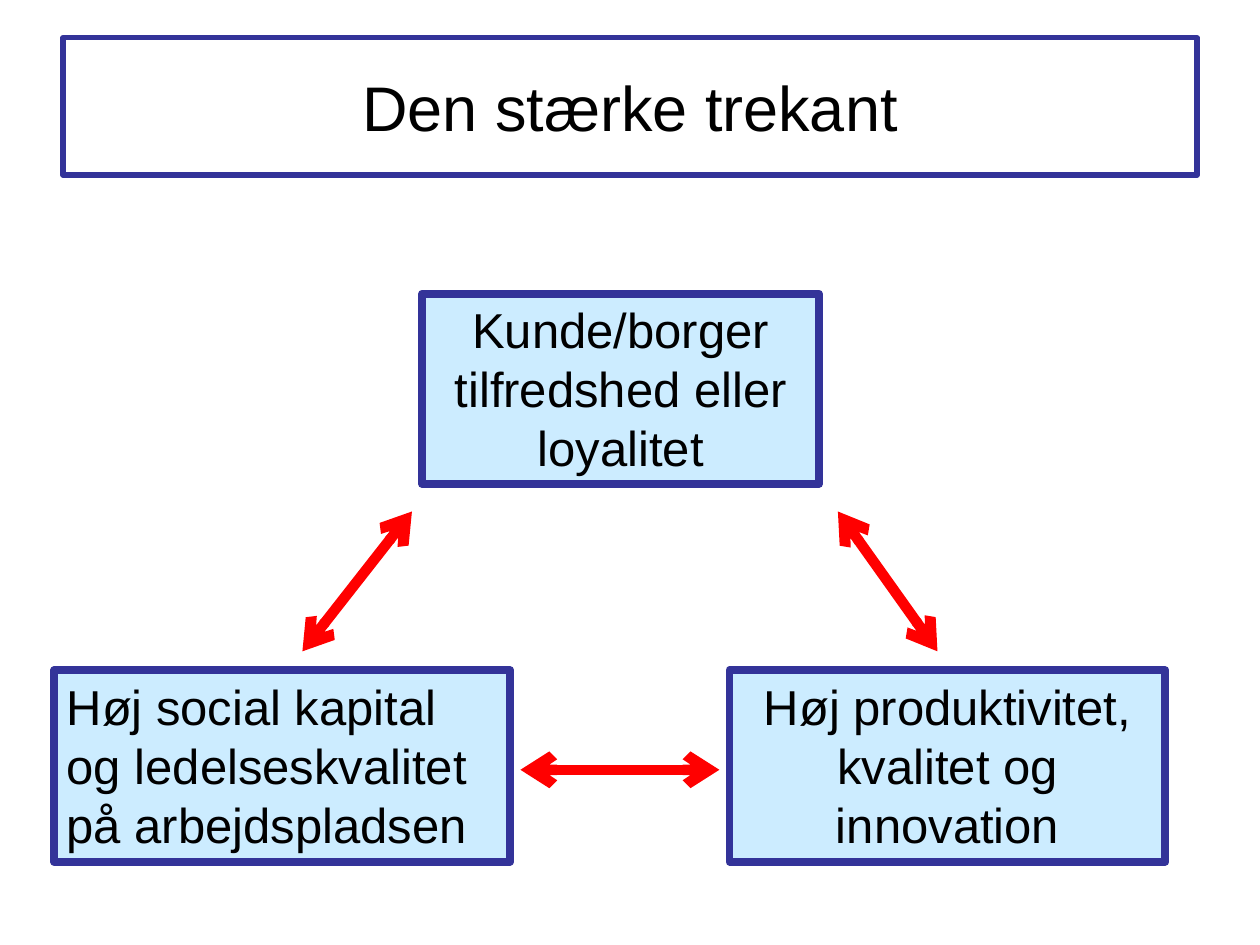
from dataclasses import dataclass

from lxml import etree
from pptx import Presentation
from pptx.dml.color import RGBColor
from pptx.enum.shapes import MSO_CONNECTOR, MSO_SHAPE
from pptx.enum.text import MSO_ANCHOR, MSO_AUTO_SIZE, PP_ALIGN
from pptx.oxml.ns import qn
from pptx.shapes.autoshape import Shape
from pptx.slide import Slide
from pptx.util import Pt

RECTANGLE = MSO_SHAPE.RECTANGLE
STRAIGHT = MSO_CONNECTOR.STRAIGHT
TOP, MIDDLE = MSO_ANCHOR.TOP, MSO_ANCHOR.MIDDLE
FIXED, GROW = MSO_AUTO_SIZE.NONE, MSO_AUTO_SIZE.SHAPE_TO_FIT_TEXT
LEFT, CENTER = PP_ALIGN.LEFT, PP_ALIGN.CENTER


@dataclass(frozen=True)
class Theme:
    font: str = "Arial"
    text: RGBColor = RGBColor(0x00, 0x00, 0x00)
    border: RGBColor = RGBColor(0x33, 0x33, 0x99)
    box: RGBColor = RGBColor(0xCC, 0xEC, 0xFF)
    arrow: RGBColor = RGBColor(0xFF, 0x00, 0x00)
    title_size: float = 36
    body_size: float = 28
    title_line: float = 3
    box_line: float = 4.5
    arrow_line: float = 6


@dataclass(frozen=True)
class Box:
    text: str
    left: float
    top: float
    width: float
    height: float
    align: PP_ALIGN = CENTER


@dataclass(frozen=True)
class Arrow:
    x1: float
    y1: float
    x2: float
    y2: float


THEME = Theme()
TITLE = Box("Den stærke trekant", 36, 21.6, 648, 78.5)
BOXES = [
    Box("Kunde/borger tilfredshed eller loyalitet", 241.2, 167.8, 226.8, 108.7),
    Box("Høj social kapital og ledelseskvalitet på arbejdspladsen",
        31, 383, 260.6, 109.4, LEFT),
    Box("Høj produktivitet, kvalitet og innovation", 416.9, 383, 249.1, 109.4),
]
ARROWS = [
    Arrow(235.4, 292.3, 172.8, 372.2),
    Arrow(478.8, 292.3, 535.7, 372.2),
    Arrow(297.4, 439.9, 411.1, 439.9),
]


def set_text(sp: Shape, box: Box, size: float, anchor: MSO_ANCHOR,
             fit: MSO_AUTO_SIZE) -> None:
    tf = sp.text_frame
    tf.text = box.text
    tf.word_wrap = True
    tf.auto_size = fit
    tf.vertical_anchor = anchor
    p = tf.paragraphs[0]
    p.alignment = box.align
    font = p.runs[0].font
    font.name = THEME.font
    font.size = Pt(size)
    font.color.rgb = THEME.text


def set_border(sp: Shape, width: float) -> None:
    sp.line.color.rgb = THEME.border
    sp.line.width = Pt(width)


def format_title(s: Slide, box: Box) -> None:
    sp = s.shapes.title
    sp.left, sp.top = Pt(box.left), Pt(box.top)
    sp.width, sp.height = Pt(box.width), Pt(box.height)
    set_border(sp, THEME.title_line)
    set_text(sp, box, THEME.title_size, MIDDLE, FIXED)


def draw_box(s: Slide, box: Box) -> None:
    sp = s.shapes.add_shape(RECTANGLE, Pt(box.left), Pt(box.top),
                            Pt(box.width), Pt(box.height))
    sp.shadow.inherit = False
    sp.fill.solid()
    sp.fill.fore_color.rgb = THEME.box
    set_border(sp, THEME.box_line)
    set_text(sp, box, THEME.body_size, TOP, GROW)


def draw_arrow(s: Slide, arrow: Arrow) -> None:
    cxn = s.shapes.add_connector(STRAIGHT, Pt(arrow.x1), Pt(arrow.y1),
                                 Pt(arrow.x2), Pt(arrow.y2))
    cxn.line.color.rgb = THEME.arrow
    cxn.line.width = Pt(THEME.arrow_line)
    ln = cxn.line._get_or_add_ln()
    for end in ("a:headEnd", "a:tailEnd"):
        etree.SubElement(ln, qn(end), type="arrow")
    etree.SubElement(ln.getparent(), qn("a:effectLst"))


def main() -> None:
    prs = Presentation()
    prs.slide_width, prs.slide_height = Pt(720), Pt(540)
    s = prs.slides.add_slide(prs.slide_layouts[5])
    format_title(s, TITLE)
    for box in BOXES:
        draw_box(s, box)
    for arrow in ARROWS:
        draw_arrow(s, arrow)
    prs.save("out.pptx")


if __name__ == "__main__":
    main()
